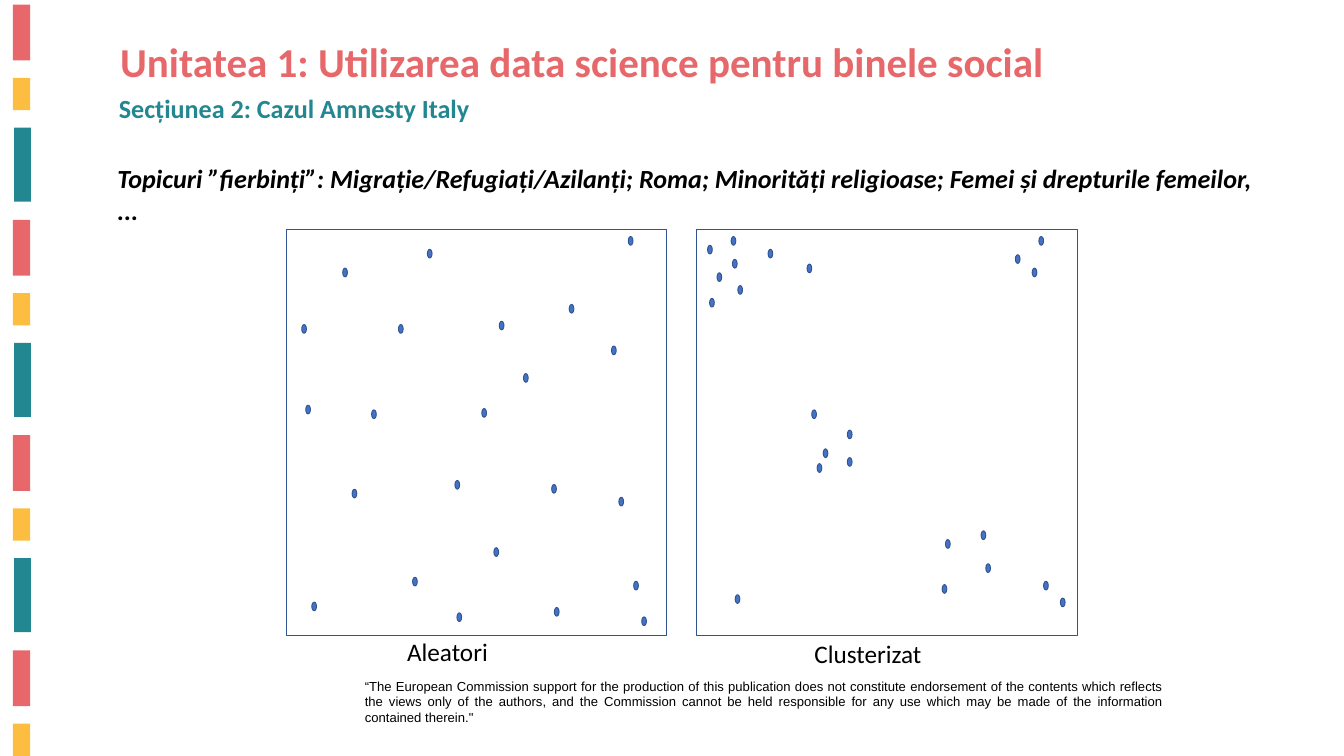
"""Build the slide that contrasts random and clustered points."""
import dataclasses
import typing

import pptx
import pptx.dml.color
import pptx.enum.shapes
import pptx.enum.text
import pptx.util

RGB = pptx.dml.color.RGBColor
SHAPES = pptx.enum.shapes.MSO_SHAPE
ALIGN = pptx.enum.text.PP_ALIGN

CORAL = RGB(0xE8, 0x67, 0x6A)
TITLE_CORAL = RGB(0xE7, 0x68, 0x6A)
AMBER = RGB(0xFD, 0xBD, 0x40)
TEAL = RGB(0x23, 0x87, 0x91)
BLUE = RGB(0x44, 0x72, 0xC4)
NAVY = RGB(0x31, 0x53, 0x8F)
BLACK = RGB(0, 0, 0)

COLUMNS, ROWS = 200, 112.5
CELL = pptx.util.Inches(0.1)
STRIPE_PERIOD = 32.03
DOT_COLUMNS, DOT_ROWS = 0.7, 1.3


class Area(typing.NamedTuple):
    """Place and size in grid columns and rows."""
    column: float
    row: float
    columns: float
    rows: float

    def lengths(self) -> list[pptx.util.Emu]:
        """Return left, top, width and height as slide lengths."""
        return [pptx.util.Emu(round(cells * CELL)) for cells in self]


class Stripe(typing.NamedTuple):
    """One repeated mark of the left border."""
    area: Area
    color: RGB


@dataclasses.dataclass(frozen=True)
class Panel:
    """A frame with its scattered dots and caption."""
    frame: Area
    dots: list[tuple[float, float]]


@dataclasses.dataclass(frozen=True)
class Passage:
    """A piece of text with its format values."""
    area: Area
    words: str
    size: float
    color: RGB = BLACK
    font: str = "Calibri"
    bold: bool = False
    italic: bool = False
    alignment: ALIGN = ALIGN.LEFT


STRIPES = [
    Stripe(Area(1.9, 0.7, 2.6, 8.3), CORAL),
    Stripe(Area(1.9, 11.6, 2.6, 4.8), AMBER),
    Stripe(Area(2.1, 19, 2.5, 11), TEAL),
]

RANDOM = Panel(Area(42.6, 34.2, 56.6, 60.3), [
    (44.9, 48.3), (63.6, 37.1), (51, 39.9), (52.4, 72.8), (55.3, 61),
    (84.7, 45.3), (59.3, 48.3), (61.4, 85.9), (45.5, 60.3), (82.5, 90.4),
    (71.7, 60.8), (77.9, 55.6), (67.7, 71.5), (74.3, 47.8), (68, 91.2),
    (82.1, 72.1), (91, 51.5), (73.5, 81.5), (93.5, 35.2), (46.4, 89.6),
    (94.3, 86.5), (95.5, 91.8), (92.1, 74),
])

CLUSTERED = Panel(Area(103.7, 34.2, 56.6, 60.3), [
    (105.3, 36.5), (108.8, 35.2), (106.7, 40.6), (109, 38.6), (114.3, 37.1),
    (109.8, 42.5), (120.1, 39.3), (105.6, 44.4), (121.6, 69), (122.5, 66.8),
    (126.1, 68.1), (126.1, 64), (120.8, 61), (151.1, 37.9), (153.6, 39.9),
    (140.2, 87), (140.7, 80.3), (146.7, 83.9), (154.6, 35.2), (146, 79),
    (155.3, 86.5), (157.8, 89), (109.4, 88.5),
])

PASSAGES = [
    Passage(Area(53.3, 100.4, 120.8, 8.1),
            "“The European Commission support for the production of this publication "
            "does not constitute endorsement of the contents which reflects the views "
            "only of the authors, and the Commission cannot be held responsible for any "
            "use which may be made of the information contained therein.\"",
            14, font="Arial", alignment=ALIGN.JUSTIFY),
    Passage(Area(120.2, 94.5, 31.7, 5.6), "Clusterizat", 27),
    Passage(Area(59.6, 94.2, 31.7, 5.6), "Aleatori", 27),
    Passage(Area(16.5, 23.7, 170.8, 10.4),
            "Topicuri ”fierbinți”: Migrație/Refugiați/Azilanți; Roma; Minorități "
            "religioase; Femei și drepturile femeilor, ...",
            28, bold=True, italic=True),
    Passage(Area(16.9, 5, 151.8, 8.4),
            "Unitatea 1: Utilizarea data science pentru binele social",
            44, TITLE_CORAL, bold=True),
    Passage(Area(16.7, 13.3, 109.8, 5.7), "Secțiunea 2: Cazul Amnesty Italy",
            28, TEAL, bold=True),
]


def draw_shape(slide: pptx.slide.Slide, kind: SHAPES, area: Area,
               fill: RGB | None = None, outline: RGB | None = None) -> None:
    """Draw a preset shape with an optional fill and outline."""
    shape = slide.shapes.add_shape(kind, *area.lengths())
    shape.shadow.inherit = False
    for paint, color in ((shape.fill, fill), (shape.line.fill, outline)):
        if color is None:
            paint.background()
        else:
            paint.solid()
            paint.fore_color.rgb = color
    if outline is not None:
        shape.line.width = pptx.util.Pt(1)


def draw_stripes(slide: pptx.slide.Slide) -> None:
    """Repeat the border stripes down to the foot of the slide."""
    for stripe in STRIPES:
        area = stripe.area
        while area.row < ROWS:
            draw_shape(slide, SHAPES.RECTANGLE, area, fill=stripe.color)
            area = area._replace(row=area.row + STRIPE_PERIOD)


def draw_panel(slide: pptx.slide.Slide, panel: Panel) -> None:
    """Draw the dots of a panel and the frame around them."""
    for column, row in panel.dots:
        draw_shape(slide, SHAPES.OVAL, Area(column, row, DOT_COLUMNS, DOT_ROWS), BLUE, NAVY)
    draw_shape(slide, SHAPES.RECTANGLE, panel.frame, outline=NAVY)


def write_passage(slide: pptx.slide.Slide, passage: Passage) -> None:
    """Write a passage into its own wrapped text box."""
    frame = slide.shapes.add_textbox(*passage.area.lengths()).text_frame
    frame.word_wrap = True
    frame.auto_size = pptx.enum.text.MSO_AUTO_SIZE.SHAPE_TO_FIT_TEXT
    paragraph = frame.paragraphs[0]
    paragraph.alignment = passage.alignment
    run = paragraph.add_run()
    run.text = passage.words
    values = {
        "name": passage.font,
        "size": pptx.util.Pt(passage.size),
        "bold": passage.bold,
        "italic": passage.italic,
    }
    for attribute, value in values.items():
        setattr(run.font, attribute, value)
    run.font.color.rgb = passage.color


def main() -> None:
    """Compose the slide and save it."""
    presentation = pptx.Presentation()
    presentation.slide_width = COLUMNS * CELL
    presentation.slide_height = round(ROWS * CELL)
    slide = presentation.slides.add_slide(presentation.slide_layouts[6])
    draw_stripes(slide)
    for panel in (RANDOM, CLUSTERED):
        draw_panel(slide, panel)
    for passage in PASSAGES:
        write_passage(slide, passage)
    presentation.save("out.pptx")


if __name__ == "__main__":
    main()
